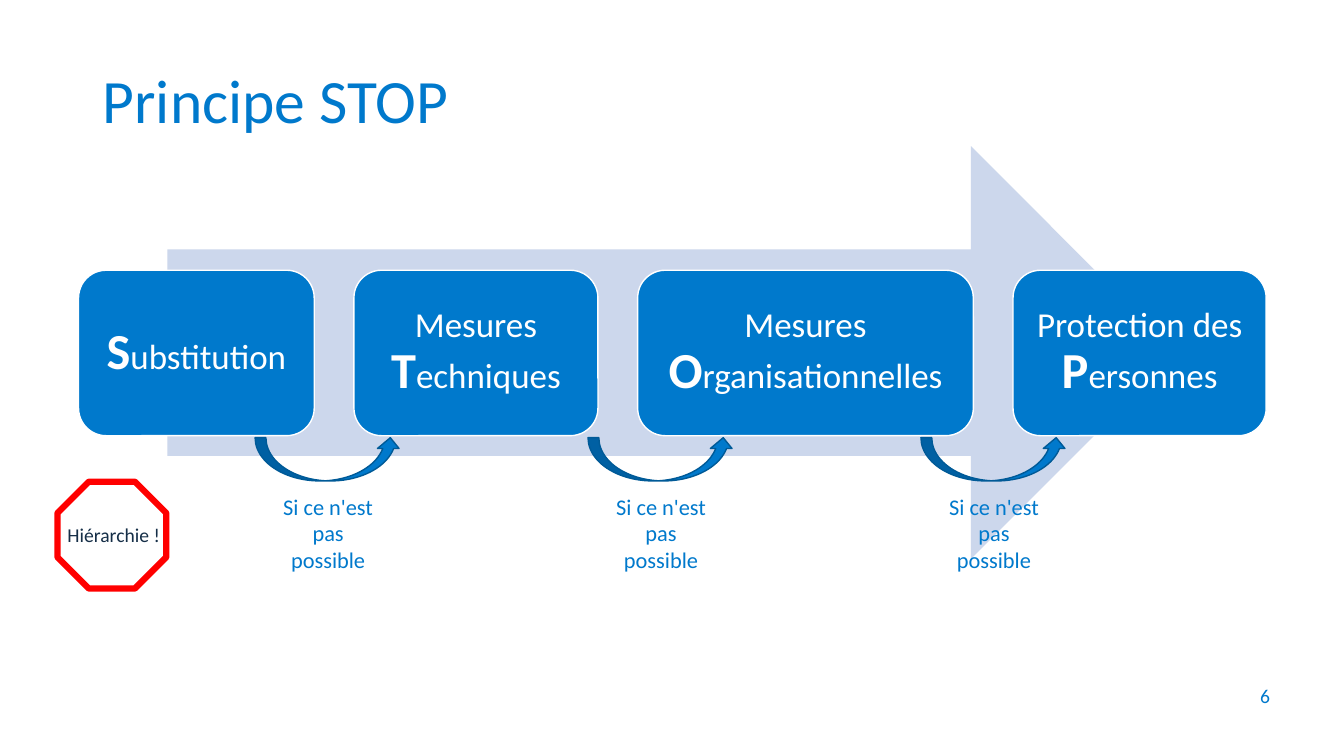
from pptx import Presentation
from pptx.dml.color import RGBColor
from pptx.enum.shapes import MSO_SHAPE as Form
from pptx.enum.text import MSO_ANCHOR as Anchor, PP_ALIGN as Align
from pptx.util import Cm, Pt

BLUE, EDGE, PALE, WHITE = "0079CC", "005A97", "CCD7EC", "FFFFFF"
RED, NAVY = "FF0000", "152E47"


def paint(color):
    return RGBColor.from_string(color)


def write(frame, *runs, color=BLUE, align=Align.LEFT, anchor=Anchor.TOP, space=1.0, inset=None):
    """Fill a text frame with one paragraph of (text, size, bold) runs."""
    frame.word_wrap = True
    frame.vertical_anchor = anchor
    if inset is not None:
        frame.margin_left = frame.margin_right = Cm(inset)
        frame.margin_top = frame.margin_bottom = Cm(inset)
    para = frame.paragraphs[0]
    para.alignment, para.line_spacing = align, space
    for text, size, bold in runs:
        run = para.add_run()
        run.text = text
        font = run.font
        font.name, font.size, font.bold = "Calibri", Pt(size), bold
        font.color.rgb = paint(color)


class Deck:
    def __init__(self):
        self.show = Presentation()
        self.show.slide_width, self.show.slide_height = Cm(33.87), Cm(19.05)
        self.slide = self.show.slides.add_slide(self.show.slide_layouts[6])

    def shape(self, form, left, top, width, height, fill, line=None, weight=1):
        item = self.slide.shapes.add_shape(form, Cm(left), Cm(top), Cm(width), Cm(height))
        item.shadow.inherit = False
        item.fill.solid()
        item.fill.fore_color.rgb = paint(fill)
        if line:
            item.line.color.rgb = paint(line)
            item.line.width = Pt(weight)
        else:
            item.line.fill.background()
        return item

    def label(self, left, top, width, height, text, size, **style):
        box = self.slide.shapes.add_textbox(Cm(left), Cm(top), Cm(width), Cm(height))
        write(box.text_frame, (text, size, False), **style)

    def step(self, left, width, lead, letter, rest):
        box = self.shape(Form.ROUNDED_RECTANGLE, left, 6.81, width, 4.17, BLUE, WHITE)
        runs = [(lead, 25, False)] if lead else []
        runs += [(letter, 36, True), (rest, 25, False)]
        write(box.text_frame, *runs, color=WHITE, align=Align.CENTER,
              anchor=Anchor.MIDDLE, space=0.9, inset=0.25)

    def hop(self, left):
        """Curved arrow to the next step, with its condition below."""
        self.shape(Form.CURVED_UP_ARROW, left, 11.03, 3.68, 1.09, BLUE, EDGE)
        self.label(left + 0.33, 12.29, 3.02, 1.63, "Si ce n'est pas possible", 16,
                   align=Align.CENTER)


def main():
    deck = Deck()
    deck.label(24.64, 17.02, 7.62, 1.02, "6", 14, align=Align.RIGHT, anchor=Anchor.MIDDLE)
    deck.label(2.34, 0.76, 25.6, 3.68, "Principe STOP", 44, anchor=Anchor.MIDDLE, space=0.9)
    deck.shape(Form.RIGHT_ARROW, 4.22, 3.68, 25.45, 10.41, PALE)

    steps = [
        (5.94, "", "S", "ubstitution"),
        (6.15, "Mesures ", "T", "echniques"),
        (8.46, "Mesures ", "O", "rganisationnelles"),
        (6.38, "Protection des ", "P", "ersonnes"),
    ]
    left, gap = 1.98, 1
    for width, *words in steps:
        deck.step(left, width, *words)
        left += width + gap

    for num in range(len(steps) - 1):
        deck.hop(6.43 + 8.39 * num)

    deck.shape(Form.OCTAGON, 1.45, 12.14, 2.74, 2.69, WHITE, RED, 4.5)
    deck.label(1.45, 13.06, 3.05, 0.86, "Hiérarchie !", 14, color=NAVY)
    deck.show.save("out.pptx")


if __name__ == "__main__":
    main()
